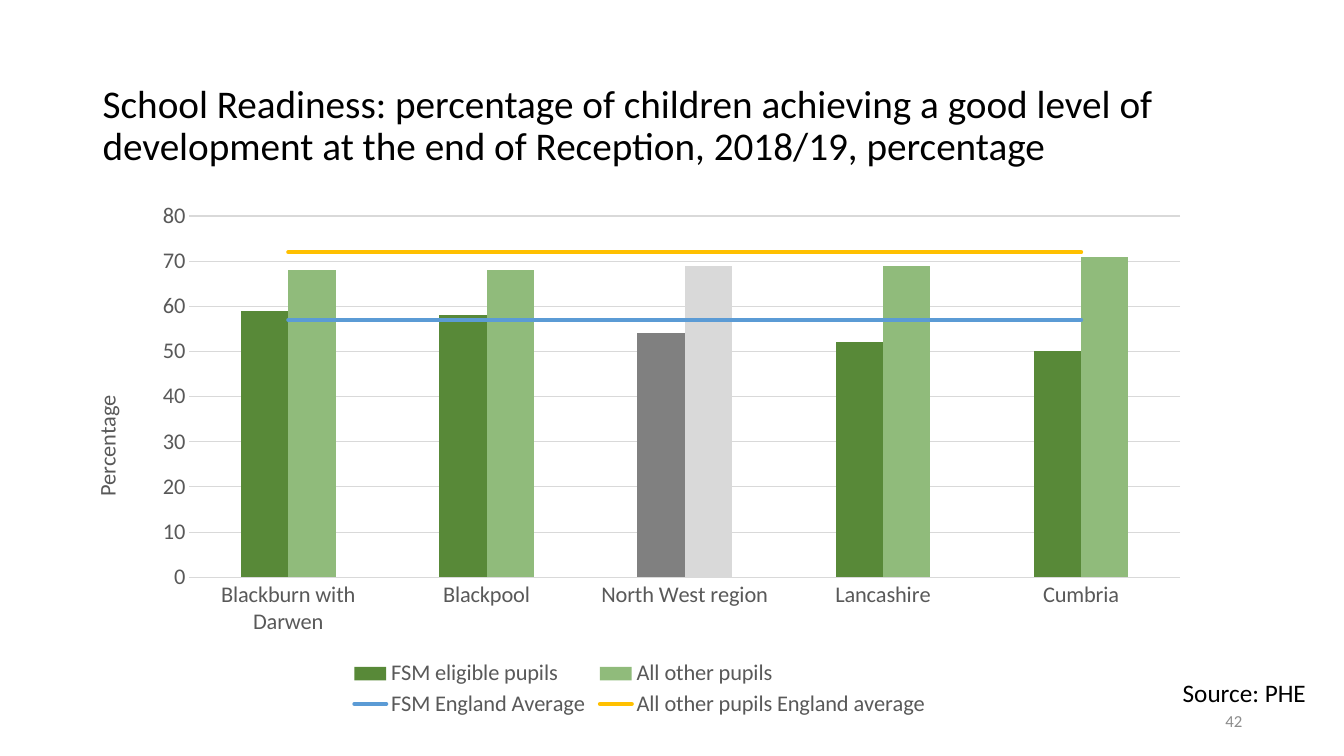
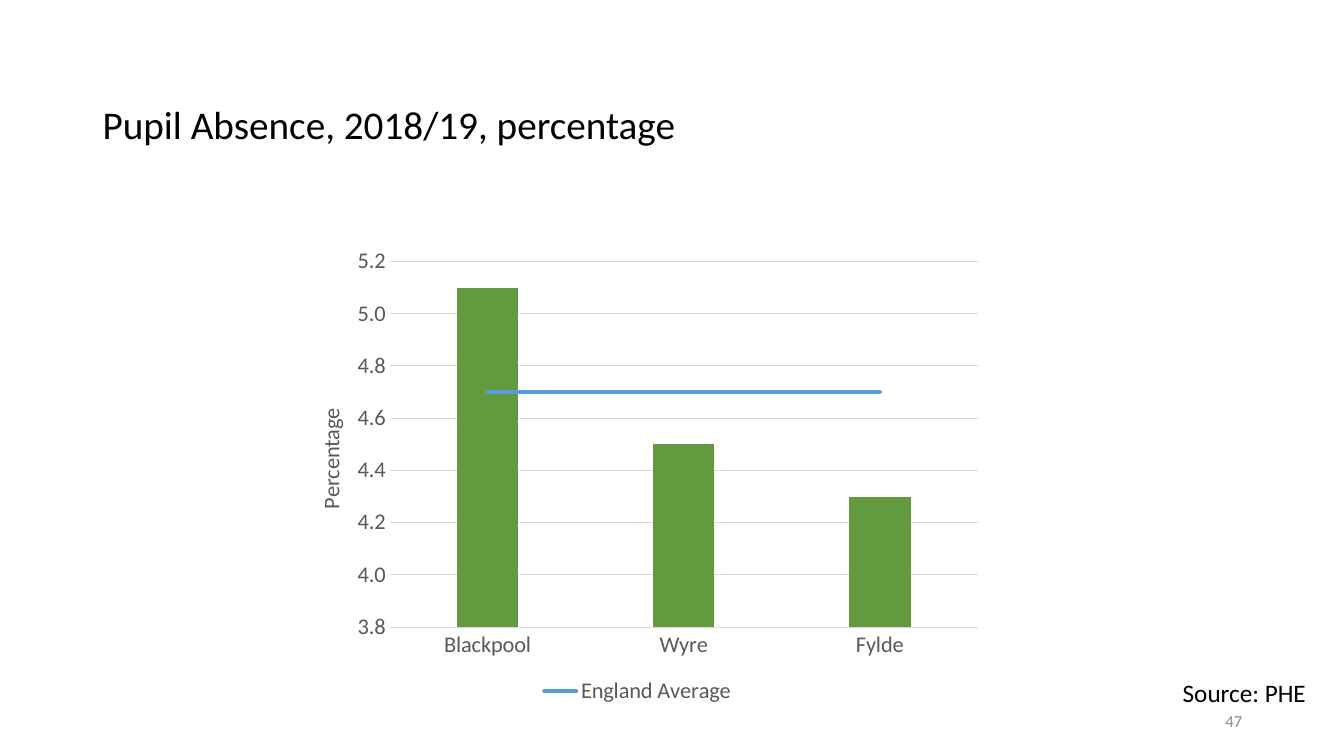
from lxml import etree
from pptx import Presentation, util as u
from pptx.chart.data import CategoryChartData
from pptx.dml.color import RGBColor
from pptx.enum import chart as ch, text
from pptx.oxml.ns import qn

FONT = "Calibri"
BLACK, LABEL_GREY, NUMBER_GREY, RULE_GREY = "000000", "595959", "8C8C8C", "D9D9D9"
BLUE, GOLD = "5B9BD5", "FFC000"
NORTH_WEST = 2  # category drawn in grey

# Series: name, values, colour, colours of single points.
# Layouts are shares of the chart's size: x, y, width, height.
SLIDES = [
    dict(
        title="School Readiness: percentage of children achieving a good level of "
              "development at the end of Reception, 2018/19, percentage",
        number="42",
        at=(0.76, 1.88, 11.17, 5.27),
        places=["Blackburn with Darwen", "Blackpool", "North West region",
                "Lancashire", "Cumbria"],
        bars=[("FSM eligible pupils", (59, 58, 54, 52, 50), "588938", {NORTH_WEST: "808080"}),
              ("All other pupils", (68, 68, 69, 69, 71), "90BB7B", {NORTH_WEST: "D9D9D9"})],
        averages=[("FSM England Average", 57, BLUE),
                  ("All other pupils England average", 72, GOLD)],
        scale=(0, 80, 10), number_format="0", overlap=0, unlisted=[],
        plot=(0.1, 0.05, 0.88, 0.68), legend=(0.24, 0.88, 0.52, 0.12),
        axis_title=(0.01, 0.38),
    ),
    dict(
        title="Pupil Absence, 2018/19, percentage",
        number="47",
        at=(2.81, 2.36, 7.03, 4.71),
        places=["Blackpool", "Wyre", "Fylde"],
        bars=[("Series 1", (5.1, 4.5, 4.3), "639A3F", {})],
        averages=[("England Average", 4.7, BLUE)],
        scale=(3.8, 5.2, 0.2), number_format="0.0", overlap=-27, unlisted=[0],
        plot=(0.15, 0.05, 0.83, 0.77), legend=(0.36, 0.92, 0.28, 0.07),
        axis_title=(0.04, 0.35),
    ),
]


def rgb(value):
    return RGBColor.from_string(value)


def style(font, size, color):
    font.name, font.size, font.bold = FONT, u.Pt(size), False
    font.color.rgb = rgb(color)


def add_text(slide, words, at, size, color, align, anchor=text.MSO_ANCHOR.MIDDLE):
    frame = slide.shapes.add_textbox(*map(u.Inches, at)).text_frame
    frame.word_wrap, frame.vertical_anchor = True, anchor
    line = frame.paragraphs[0]
    line.text, line.alignment = words, align
    style(line.font, size, color)
    return line


def add_element(parent, tag, **attributes):
    return etree.SubElement(parent, qn(tag), attributes)


def place(part, position, shares, inner=False):
    """Give a chart part a fixed layout, as its child number `position`."""
    for old in part.findall(qn("c:layout")):
        part.remove(old)
    layout = part.makeelement(qn("c:layout"))
    part.insert(position, layout)
    manual = add_element(layout, "c:manualLayout")
    if inner:
        add_element(manual, "c:layoutTarget", val="inner")
    for side in "xy":
        add_element(manual, f"c:{side}Mode", val="edge")
    for side, share in zip("xywh", shares):
        add_element(manual, f"c:{side}", val=str(share))


def move_to_lines(chart, first):
    """Turn the column series from number `first` on into lines on the same axes."""
    columns = chart.plots[0]._element
    lines = columns.makeelement(qn("c:lineChart"))
    add_element(lines, "c:grouping", val="standard")
    add_element(lines, "c:varyColors", val="0")
    for series in columns.findall(qn("c:ser"))[first:]:
        for column_only in series.findall(qn("c:invertIfNegative")):
            series.remove(column_only)
        lines.append(series)
    add_element(lines, "c:marker", val="1")
    for axis in columns.findall(qn("c:axId")):
        add_element(lines, "c:axId", val=axis.get("val"))
    columns.addnext(lines)


def style_axes(chart, content):
    across, up = chart.category_axis, chart.value_axis
    for axis in (across, up):
        axis.major_tick_mark = axis.minor_tick_mark = ch.XL_TICK_MARK.NONE
        style(axis.tick_labels.font, 16, LABEL_GREY)
    up.has_major_gridlines = True
    for rule in (across.format.line, up.major_gridlines.format.line):
        rule.color.rgb, rule.width = rgb(RULE_GREY), u.Pt(0.75)
    up.format.line.fill.background()
    up.minimum_scale, up.maximum_scale, up.major_unit = content["scale"]
    up.tick_labels.number_format = content["number_format"]
    up.tick_labels.number_format_is_linked = False

    frame = up.axis_title.text_frame
    frame.text = "Percentage"
    style(frame.paragraphs[0].font, 16, LABEL_GREY)
    body = frame._txBody.find(qn("a:bodyPr"))
    body.set("rot", "-5400000")
    body.set("vert", "horz")
    place(up.axis_title._element, 1, content["axis_title"])


def style_legend(chart, content):
    chart.has_legend = True
    legend = chart.legend
    legend.position = ch.XL_LEGEND_POSITION.BOTTOM
    legend.include_in_layout = False
    style(legend.font, 16, LABEL_GREY)
    root = legend._element
    for position, index in enumerate(content["unlisted"], 1):
        entry = root.makeelement(qn("c:legendEntry"))
        add_element(entry, "c:idx", val=str(index))
        add_element(entry, "c:delete", val="1")
        root.insert(position, entry)
    place(root, 1 + len(content["unlisted"]), content["legend"])


def add_combined_chart(slide, content):
    places, bars, averages = content["places"], content["bars"], content["averages"]
    data = CategoryChartData(number_format=content["number_format"])
    data.categories = places
    for name, values, *_ in bars:
        data.add_series(name, values)
    for name, value, _ in averages:
        data.add_series(name, [value] * len(places))
    chart = slide.shapes.add_chart(ch.XL_CHART_TYPE.COLUMN_CLUSTERED,
                                   *map(u.Inches, content["at"]), data).chart
    chart.has_title = False
    style(chart.font, 10, BLACK)
    move_to_lines(chart, len(bars))

    columns, lines = chart.plots
    columns.gap_width, columns.overlap = 219, content["overlap"]
    columns.vary_by_categories = False
    for series, (*_, color, points) in zip(columns.series, bars):
        fills = [(series, color)] + [(series.points[i], c) for i, c in points.items()]
        for part, fill_color in fills:
            part.format.fill.solid()
            part.format.fill.fore_color.rgb = rgb(fill_color)
    for series, (*_, color) in zip(lines.series, averages):
        series.smooth = False
        series.marker.style = ch.XL_MARKER_STYLE.NONE
        series.format.line.color.rgb = rgb(color)
        series.format.line.width = u.Pt(3)
        series.format.line._get_or_add_ln().set("cap", "rnd")

    style_axes(chart, content)
    style_legend(chart, content)
    place(chart._chartSpace.chart.plotArea, 0, content["plot"], inner=True)


def main():
    deck = Presentation()
    deck.slide_width, deck.slide_height = u.Inches(13.33), u.Inches(7.5)
    left, right = text.PP_ALIGN.LEFT, text.PP_ALIGN.RIGHT
    for content in SLIDES:
        slide = deck.slides.add_slide(deck.slide_layouts[6])
        # Title, page number and source
        title = add_text(slide, content["title"], (0.92, 0.72, 11.5, 1.08), 28, BLACK, left)
        title.line_spacing = 0.9
        add_text(slide, content["number"], (9.42, 6.95, 3, 0.4), 12, NUMBER_GREY, right)
        add_text(slide, "Source: PHE", (11.16, 6.67, 1.89, 0.4), 18, BLACK, right,
                 text.MSO_ANCHOR.TOP)
        # Columns with England averages as lines
        add_combined_chart(slide, content)
    deck.save("out.pptx")


if __name__ == "__main__":
    main()
